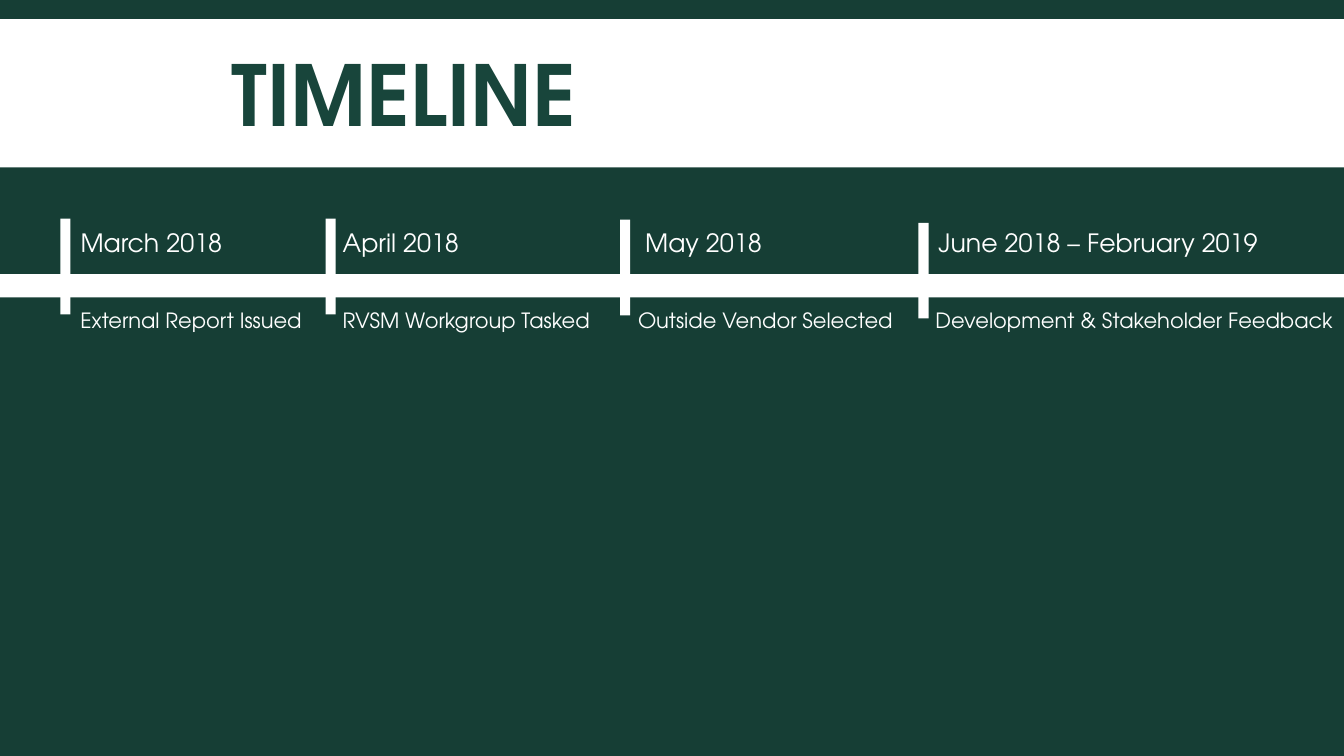
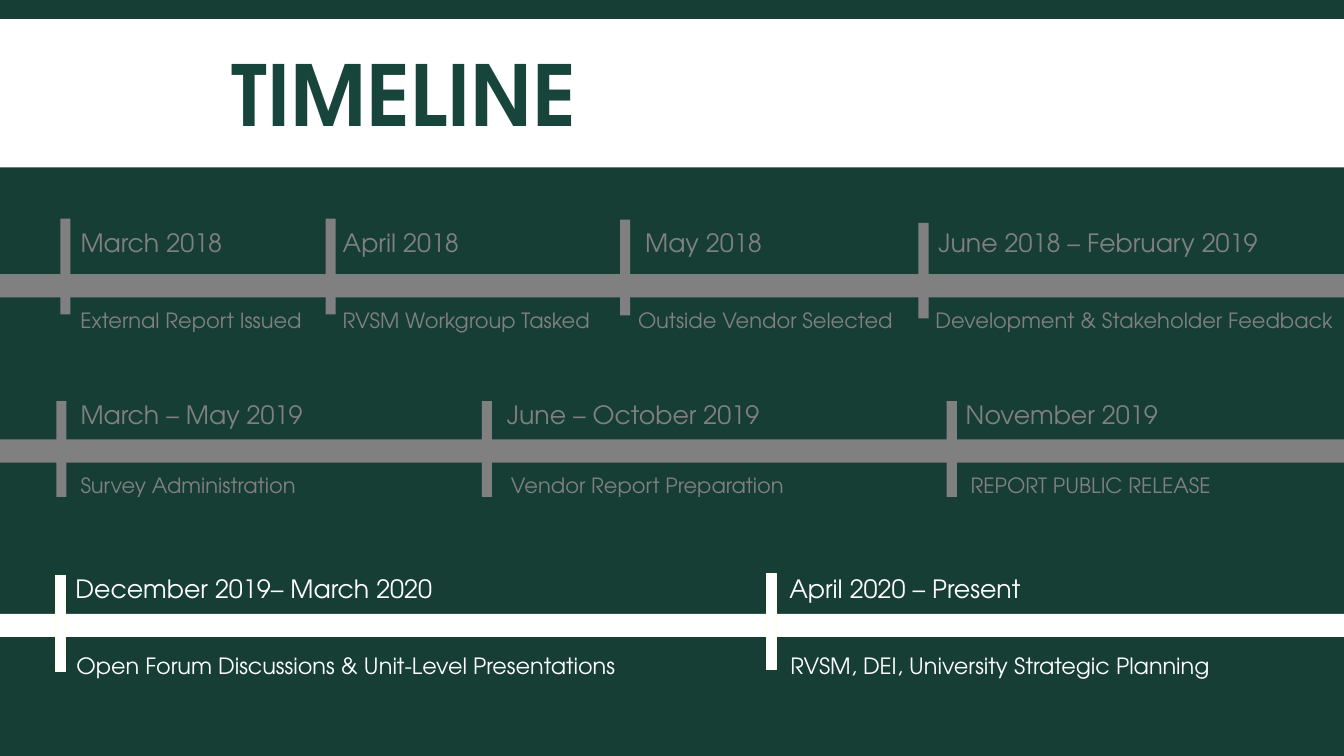
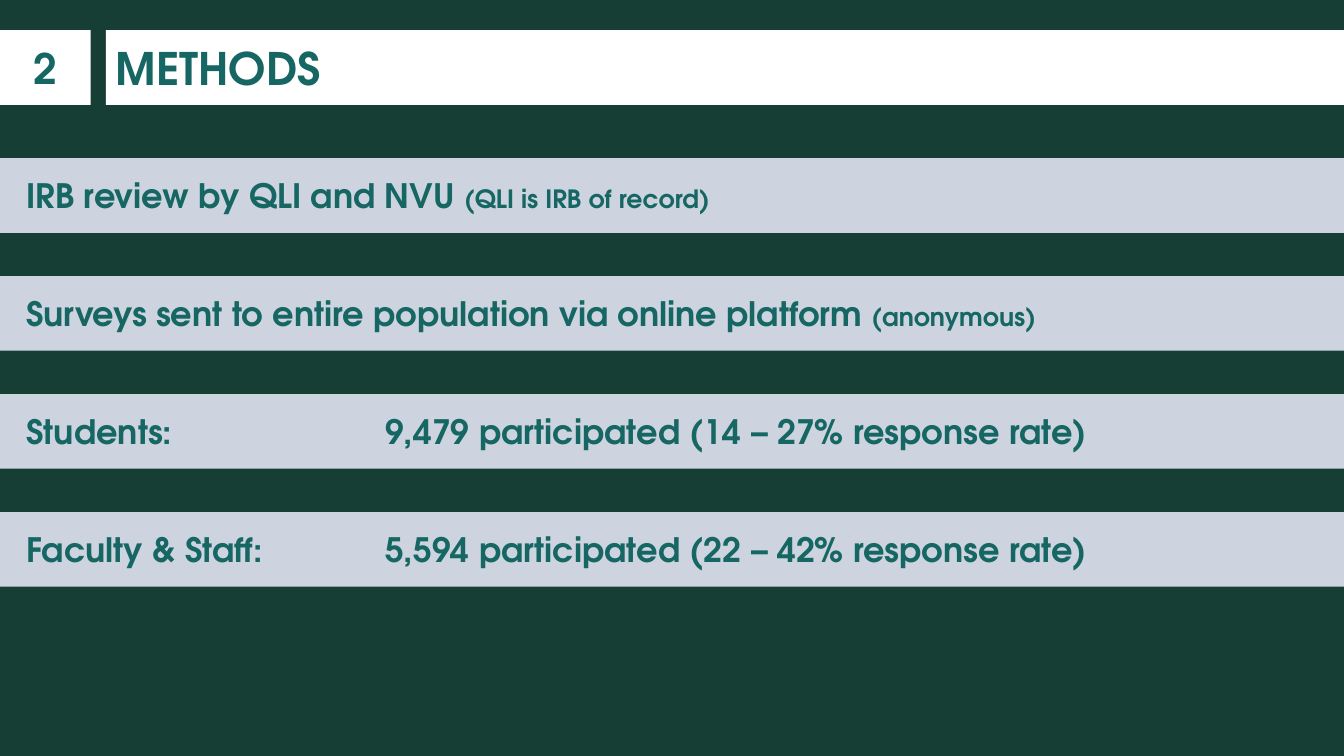
from pptx import Presentation
from pptx.dml.color import RGBColor
from pptx.enum.shapes import MSO_SHAPE
from pptx.enum.text import MSO_ANCHOR, MSO_AUTO_SIZE, PP_ALIGN
from pptx.oxml.ns import qn
from pptx.util import Inches, Pt
from lxml import etree

FONT = "TeX Gyre Adventor"
COLORS = {
    "background": "163E35",
    "title": "18453B",
    "teal": "166664",
    "white": "FFFFFF",
    "past": "808080",
    "cream": "FFFFE3",
    "band": "CED4DF",
}
SLIDE_WIDTH = 13.33
LINE_HEIGHT = 0.23
TICK_WIDTH, TICK_HEIGHT = 0.1, 0.95
BAND_HEIGHT = 0.74


def add_bar(slide, left, top, width, height, color, outline=None):
    bar = slide.shapes.add_shape(
        MSO_SHAPE.RECTANGLE, Inches(left), Inches(top), Inches(width), Inches(height))
    bar.shadow.inherit = False
    bar.fill.solid()
    bar.fill.fore_color.rgb = RGBColor.from_string(COLORS[color])
    if outline:
        bar.line.color.rgb = RGBColor.from_string(COLORS[outline])
        bar.line.width = Pt(0.75)
    else:
        bar.line.fill.background()
    return bar


def write_text(shape, runs, color, bold=False, align=PP_ALIGN.LEFT,
               anchor=MSO_ANCHOR.MIDDLE, inset=0.1):
    """Fill a shape with one paragraph made of (text, size) runs."""
    frame = shape.text_frame
    frame_format = {
        "word_wrap": True,
        "auto_size": MSO_AUTO_SIZE.NONE,
        "vertical_anchor": anchor,
        "margin_left": Inches(inset),
    }
    for name, value in frame_format.items():
        setattr(frame, name, value)
    paragraph = frame.paragraphs[0]
    paragraph.alignment = align
    for text, size in runs:
        run = paragraph.add_run()
        run.text = text
        font_format = {"name": FONT, "size": Pt(size), "bold": bold}
        for name, value in font_format.items():
            setattr(run.font, name, value)
        run.font.color.rgb = RGBColor.from_string(COLORS[color])
    return paragraph


presentation = Presentation()
presentation.slide_width = Inches(SLIDE_WIDTH)
presentation.slide_height = Inches(7.5)
background = presentation.slide_master.background.fill
background.solid()
background.fore_color.rgb = RGBColor.from_string(COLORS["background"])
title_only = presentation.slide_layouts[5]

# Each title is a white band: left, top, width, height, inset, size, colour
TIMELINE_TITLE = ("TIMELINE", 0, 0.19, SLIDE_WIDTH, 1.47, 2.3, 60, "title")
METHODS_TITLE = ("METHODS", 1.05, 0.3, 12.28, BAND_HEIGHT, 0.1, 32, "teal")
slides = []
for text, left, top, width, height, inset, size, color in (
        TIMELINE_TITLE, TIMELINE_TITLE, METHODS_TITLE):
    slide = presentation.slides.add_slide(title_only)
    title = slide.shapes.title
    placement = {"left": left, "top": top, "width": width, "height": height}
    for name, value in placement.items():
        setattr(title, name, Inches(value))
    title.fill.solid()
    title.fill.fore_color.rgb = RGBColor.from_string(COLORS["white"])
    write_text(title, [(text, size)], color, bold=True, inset=inset)
    slides.append(slide)
first_timeline, full_timeline, methods = slides

# Events: tick left, tick top, (date left, width, text), (label left, width, text)
ROW_2018 = {
    "line_top": 2.72, "date_top": 2.21, "label_top": 3, "label_size": 15,
    "events": [
        (0.6, 2.17, (0.7, 1.81, "March 2018"), (0.7, 2.87, "External Report Issued")),
        (3.23, 2.17, (3.3, 1.81, "April 2018"), (3.3, 2.88, "RVSM Workgroup Tasked")),
        (6.15, 2.18, (6.3, 1.81, "May 2018"), (6.23, 3.1, "Outside Vendor Selected")),
        (9.11, 2.21, (9.21, 3.67, "June 2018 – February 2019"),
         (9.18, 4.52, "Development & Stakeholder Feedback")),
    ],
}
ROW_2019 = {
    "line_top": 4.36, "date_top": 3.91, "label_top": 4.64, "label_size": 15,
    "events": [
        (0.56, 3.98, (0.7, 2.49, "March – May 2019"), (0.7, 3.18, "Survey Administration")),
        (4.78, 3.98, (4.93, 2.88, "June – October 2019"),
         (4.97, 4.46, "Vendor Report Preparation")),
        (9.39, 3.98, (9.48, 3.5, "November 2019"), (9.53, 3.8, "REPORT PUBLIC RELEASE")),
    ],
}
ROW_2020 = {
    "line_top": 6.09, "date_top": 5.64, "label_top": 6.42, "label_size": 16,
    "events": [
        (0.55, 5.71, (0.65, 4.89, "December 2019– March 2020"),
         (0.66, 7.0, "Open Forum Discussions & Unit-Level Presentations")),
        (7.6, 5.69, (7.73, 4.89, "April 2020 – Present"),
         (7.74, 5.24, "RVSM, DEI, University Strategic Planning")),
    ],
}

for slide, row, color, outline in (
        (first_timeline, ROW_2018, "white", None),
        (full_timeline, ROW_2018, "past", None),
        (full_timeline, ROW_2019, "past", None),
        (full_timeline, ROW_2020, "white", "cream")):
    add_bar(slide, 0, row["line_top"], SLIDE_WIDTH, LINE_HEIGHT, color)
    for tick_left, tick_top, date, label in row["events"]:
        add_bar(slide, tick_left, tick_top, TICK_WIDTH, TICK_HEIGHT, color, outline)
        for (left, width, text), top, height, size in (
                (date, row["date_top"], 0.4, 18),
                (label, row["label_top"], 0.35, row["label_size"])):
            box = slide.shapes.add_textbox(
                Inches(left), Inches(top), Inches(width), Inches(height))
            write_text(box, [(text, size)], color, anchor=MSO_ANCHOR.TOP)

number = add_bar(methods, 0, 0.3, 0.9, BAND_HEIGHT, "white")
write_text(number, [("2", 30)], "teal", bold=True, align=PP_ALIGN.CENTER)

METHOD_RUNS = [
    [("IRB review by QLI and NVU ", 24), ("(QLI is IRB of record)", 18)],
    [("Surveys sent to entire population via online platform ", 24), ("(anonymous)", 18)],
    [("Students:\t9,479 participated (14 – 27% response rate)", 24)],
    [("Faculty & Staff:\t5,594 participated (22 – 42% response rate)", 24)],
]
BAND_TOP, BAND_STEP = 1.57, 1.17
for index, runs in enumerate(METHOD_RUNS):
    band = add_bar(methods, 0, BAND_TOP + index * BAND_STEP, SLIDE_WIDTH, BAND_HEIGHT, "band")
    paragraph = write_text(band, runs, "teal", bold=True, inset=0.26)
    tab_list = etree.SubElement(paragraph._p.get_or_add_pPr(), qn("a:tabLst"))
    etree.SubElement(tab_list, qn("a:tab"), pos=str(Inches(3.56)), algn="l")

presentation.save("out.pptx")
